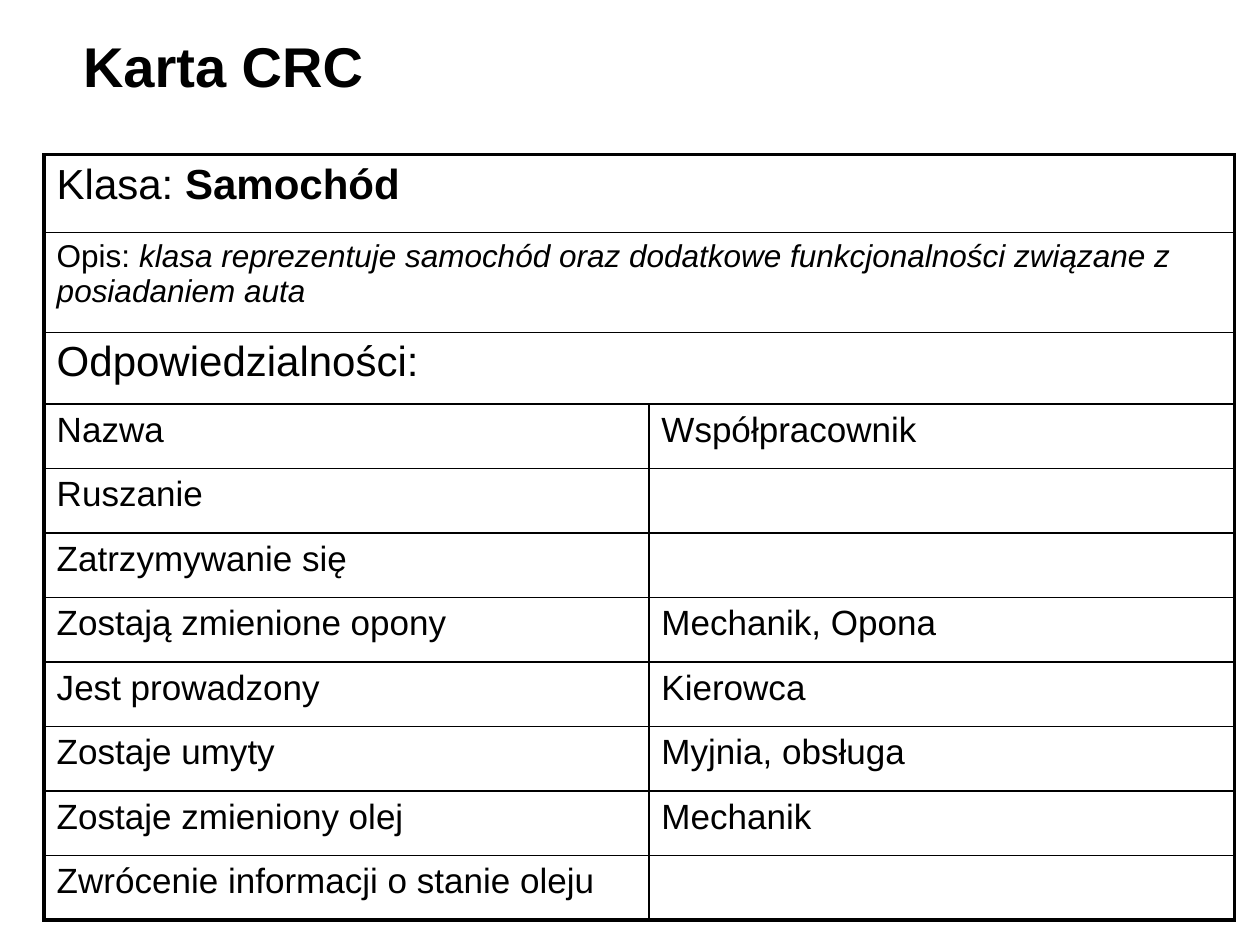
from dataclasses import dataclass

from lxml.etree import SubElement
from pptx import Presentation
from pptx.dml.color import RGBColor
from pptx.enum.text import MSO_ANCHOR, MSO_AUTO_SIZE, PP_ALIGN
from pptx.oxml.ns import qn
from pptx.util import Cm, Pt


@dataclass(frozen=True)
class Theme:
    """Colours, font, type sizes and line widths of the card."""
    font: str = "Arial"
    ink: str = "000000"
    title: int = 32
    heading: int = 24
    body: int = 20
    note: int = 18
    outer: float = 2.25
    inner: float = 1


THEME = Theme()
COLUMNS = (12.19, 11.81)
HEADINGS = (
    (1.57, THEME.heading, (("Klasa: ", {}), ("Samochód", {"bold": True}))),
    (2.01, THEME.note, (
        ("Opis: ", {}),
        ("klasa reprezentuje samochód oraz dodatkowe funkcjonalności związane z posiadaniem auta",
         {"italic": True}))),
    (1.45, THEME.heading, (("Odpowiedzialności:", {}),)),
)
DUTY_HEIGHT = 1.3
DUTIES = (
    ("Nazwa", "Współpracownik"),
    ("Ruszanie", ""),
    ("Zatrzymywanie się", ""),
    ("Zostają zmienione opony", "Mechanik, Opona"),
    ("Jest prowadzony", "Kierowca"),
    ("Zostaje umyty", "Myjnia, obsługa"),
    ("Zostaje zmieniony olej", "Mechanik"),
    ("Zwrócenie informacji o stanie oleju", ""),
)


def add_run(p, text, size, bold=False, italic=False):
    """Append one formatted run to a paragraph."""
    r = p.add_run()
    r.text = text
    r.font.name = THEME.font
    r.font.size = Pt(size)
    r.font.bold = bold
    r.font.italic = italic
    r.font.color.rgb = RGBColor.from_string(THEME.ink)


def set_border(cell, side, width):
    """Draw one side of a cell as a solid line."""
    ln = SubElement(cell._tc.get_or_add_tcPr(), qn(f"a:ln{side}"), w=str(Pt(width)))
    fill = SubElement(ln, qn("a:solidFill"))
    SubElement(fill, qn("a:srgbClr"), val=THEME.ink)


def frame_cells(table):
    """Give the table a heavy outline, thin inner lines and no fill."""
    last_row, last_col = len(table.rows) - 1, len(table.columns) - 1
    for i in range(last_row + 1):
        for j in range(last_col + 1):
            cell = table.cell(i, j)
            merged = cell.is_merge_origin or cell.is_spanned
            edges = {"L": j == 0 or merged, "R": j == last_col or merged,
                     "T": i == 0, "B": i == last_row}
            for side, is_outer in edges.items():
                set_border(cell, side, THEME.outer if is_outer else THEME.inner)
            cell.fill.background()


def add_title(s, text):
    """Place and format the title placeholder."""
    sp = s.shapes.title
    sp.left, sp.top, sp.width, sp.height = Cm(1.42), Cm(0.5), Cm(8.6), Cm(1.63)
    tf = sp.text_frame
    tf.word_wrap = True
    tf.auto_size = MSO_AUTO_SIZE.SHAPE_TO_FIT_TEXT
    tf.vertical_anchor = MSO_ANCHOR.TOP
    p = tf.paragraphs[0]
    p.alignment = PP_ALIGN.LEFT
    add_run(p, text, THEME.title, bold=True)


def add_card(s):
    """Add the class card with full-width headings above the duties."""
    heights = [height for height, _, _ in HEADINGS] + [DUTY_HEIGHT] * len(DUTIES)
    table = s.shapes.add_table(len(heights), len(COLUMNS), Cm(0.89), Cm(3.12),
                               Cm(sum(COLUMNS)), Cm(sum(heights))).table
    table.first_row = table.horz_banding = False
    for column, width in zip(table.columns, COLUMNS):
        column.width = Cm(width)
    for row, height in zip(table.rows, heights):
        row.height = Cm(height)
    for i, (_, size, runs) in enumerate(HEADINGS):
        cell = table.cell(i, 0)
        cell.merge(table.cell(i, len(COLUMNS) - 1))
        for text, style in runs:
            add_run(cell.text_frame.paragraphs[0], text, size, **style)
    for i, duty in enumerate(DUTIES, len(HEADINGS)):
        for j, text in enumerate(duty):
            if text:
                add_run(table.cell(i, j).text_frame.paragraphs[0], text, THEME.body)
    frame_cells(table)


def main():
    """Build the slide and save it."""
    prs = Presentation()
    prs.slide_width, prs.slide_height = Cm(25.4), Cm(19.05)
    s = prs.slides.add_slide(prs.slide_layouts[5])
    add_title(s, "Karta CRC")
    add_card(s)
    prs.save("out.pptx")


if __name__ == "__main__":
    main()
